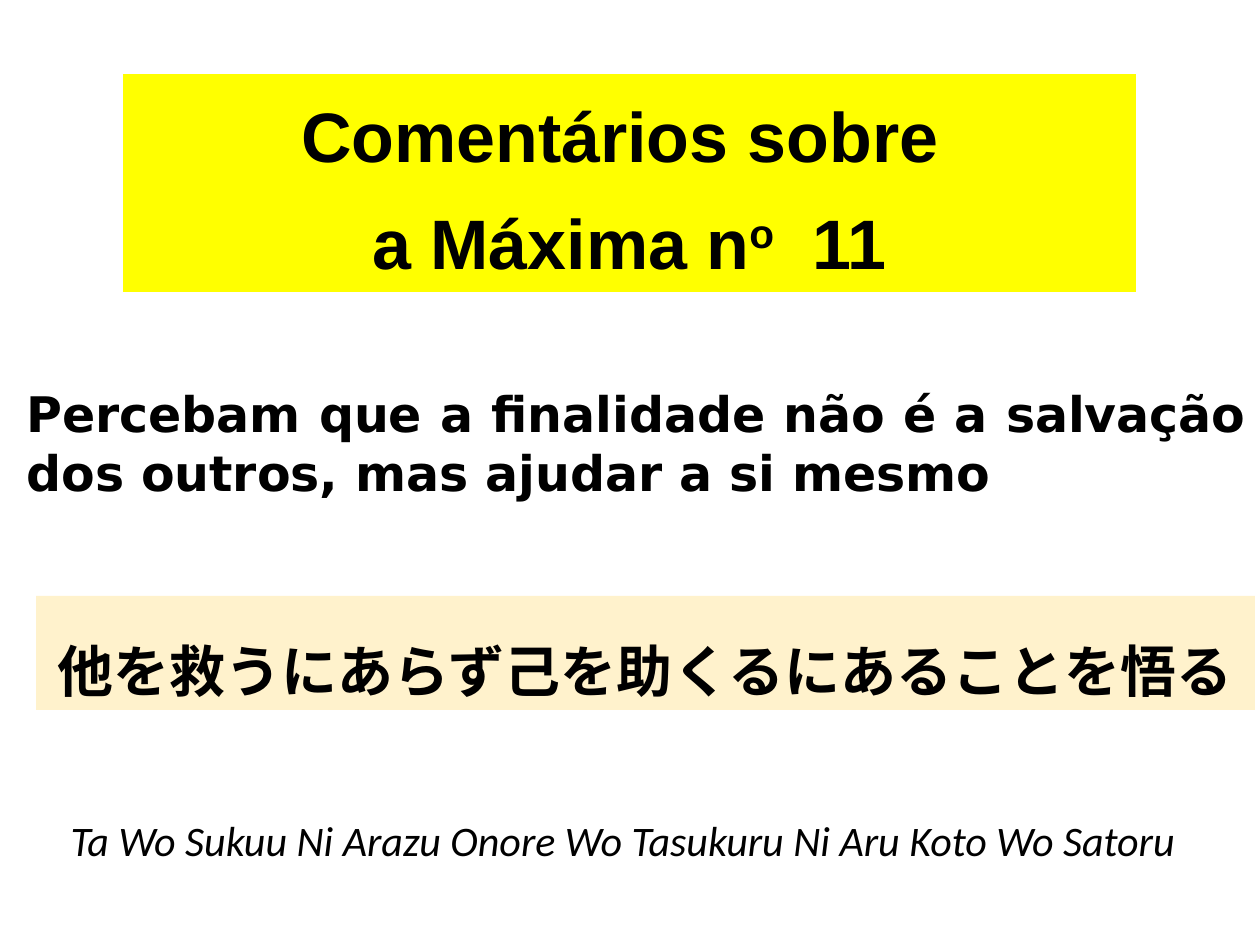
from pptx import Presentation
from pptx.dml.color import RGBColor
from pptx.enum.text import MSO_ANCHOR as Anchor, MSO_AUTO_SIZE as AutoSize, PP_ALIGN as Align
from pptx.oxml.ns import qn
from pptx.util import Emu, Pt

PX = 914400 / 126
COLORS = {"ink": "000000", "title": "FFFF00", "maxim": "FFF2CC"}


def px(n):
    """Convert whole pixels to EMU."""
    return Emu(round(n * PX))


def rgb(name):
    """Look up a named colour."""
    return RGBColor.from_string(COLORS[name])


def style(p, font, size, align, bold=False, italic=False):
    """Format one paragraph."""
    p.alignment = align
    f = p.font
    f.name, f.size, f.bold, f.italic = font, Pt(size), bold, italic
    f.color.rgb = rgb("ink")


def frame(sp, anchor, fill=None):
    """Prepare a shape's text frame and optional fill."""
    if fill:
        sp.fill.solid()
        sp.fill.fore_color.rgb = rgb(fill)
    tf = sp.text_frame
    tf.word_wrap = True
    tf.auto_size = AutoSize.NONE
    tf.vertical_anchor = anchor
    return tf


def add_title(s, box):
    """Fill the title placeholder with its two lines."""
    sp = s.shapes.title
    sp.left, sp.top, sp.width, sp.height = map(px, box)
    tf = frame(sp, Anchor.TOP, "title")
    lines = [["Comentários sobre "], ["a Máxima n", "o", "  11"]]
    for i, parts in enumerate(lines):
        p = tf.add_paragraph() if i else tf.paragraphs[0]
        style(p, "Arial", 40, Align.CENTER, bold=True)
        p.line_spacing = 1.15
        p.space_after = Pt(6)
        for text in parts:
            r = p.add_run()
            r.text = text
            if text == "o":
                r.font._element.set("baseline", "30000")


def add_line(s, box, text, font, size, align, anchor=Anchor.TOP, fill=None, **look):
    """Add one version of the maxim in its box."""
    sp = s.shapes.add_textbox(*map(px, box))
    p = frame(sp, anchor, fill).paragraphs[0]
    style(p, font, size, align, **look)
    r = p.add_run()
    r.text = text
    ea = r.font._element.makeelement(qn("a:ea"), {"typeface": font})
    r.font._element.append(ea)


def main():
    """Build and save the slide."""
    prs = Presentation()
    prs.slide_width, prs.slide_height = px(1260), px(945)
    s = prs.slides.add_slide(prs.slide_layouts[5])
    add_title(s, (123, 74, 1013, 218))
    add_line(s, (36, 596, 1219, 114), "他を救うにあらず己を助くるにあることを悟る ",
             "DejaVu Sans", 32, Align.CENTER, Anchor.BOTTOM, "maxim", bold=True)
    add_line(s, (14, 377, 1244, 131),
             "Percebam que a finalidade não é a salvação dos outros, mas ajudar a si mesmo ",
             "DejaVu Sans", 28, Align.JUSTIFY, bold=True)
    add_line(s, (0, 808, 1255, 63),
             "Ta Wo Sukuu Ni Arazu Onore Wo Tasukuru Ni Aru Koto Wo Satoru ",
             "Calibri", 24, Align.CENTER, italic=True)
    prs.save("out.pptx")


if __name__ == "__main__":
    main()
